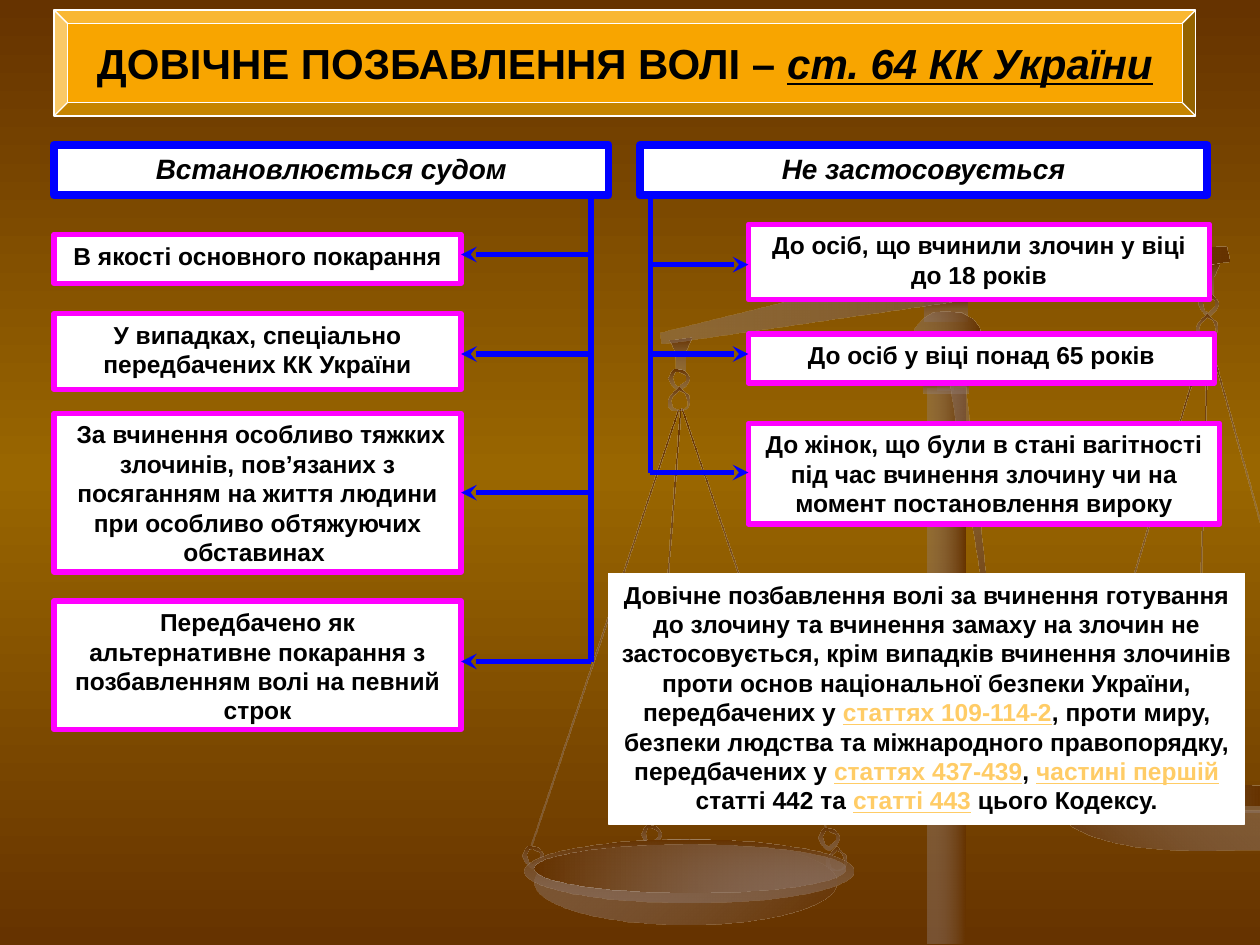
"""Build the slide on life imprisonment, with scales behind the scheme."""
from lxml import etree
from pptx import Presentation
from pptx import util as u
from pptx.dml.color import RGBColor
from pptx.enum import shapes, text
from pptx.oxml import ns

BLACK, WHITE, BLUE, PINK, GOLD = "000000", "FFFFFF", "0000FF", "FF00FF", "FFCC66"
BROWN, OCHRE, GREY = ("663300", 100), ("996600", 100), ("937F79", 40)
RISE, FADE = (BROWN, GREY), (GREY, BROWN)
KINDS = {"rect": shapes.MSO_SHAPE.RECTANGLE, "oval": shapes.MSO_SHAPE.OVAL,
         "round": shapes.MSO_SHAPE.ROUNDED_RECTANGLE, "bevel": shapes.MSO_SHAPE.BEVEL}

HOOK = [[(.18, 0), (0, .02), (.05, .12), (.05, .26), (.13, .26), (.13, .11)]]
LINK = [[(.08, .17), (.13, .13), (.15, .09), (.16, .07), (.15, .05), (.12, .01), (.07, 0),
         (.04, 0), (.02, .02), (.01, .05), (0, .07), (.02, .12), (.05, .15)],
        [(.08, .02), (.12, .04), (.13, .05), (.13, .07), (.13, .09), (.09, .12), (.08, .14),
         (.05, .12), (.04, .09), (.03, .06), (.05, .02)]]
LOOP = [[(0, .16), (.02, .18), (.04, .19), (.09, .19), (.14, .17), (.16, .12), (.15, .07),
         (.12, .04), (.08, 0), (.04, .04), (.01, .08), (0, .11)],
        [(.02, .11), (.03, .08), (.05, .06), (.08, .03), (.12, .05), (.13, .08), (.14, .12),
         (.14, .15), (.12, .17), (.07, .18), (.03, .16)]]
RIM = [[(9.58, 6.24), (8.97, 6.24), (8.65, 6.23), (8.46, 6.24), (8.31, 6.26), (8.27, 6.28),
        (8.32, 6.33), (8.52, 6.38), (8.78, 6.41), (9.14, 6.44), (9.58, 6.45), (10, 6.45),
        (10, 6.26), (9.8, 6.26)]]
BOWL = [[(8.31, 6.33), (8.35, 6.42), (8.42, 6.49), (8.52, 6.57), (8.65, 6.63), (8.82, 6.68),
         (9.03, 6.72), (9.28, 6.74), (9.57, 6.75), (10, 6.74), (10, 6.43), (9.53, 6.43),
         (9.18, 6.42), (8.86, 6.4), (8.57, 6.37)]]
INSIDE = [[(9.56, 6.23), (8.86, 6.23), (8.62, 6.23), (8.43, 6.26), (8.34, 6.28), (8.43, 6.31),
           (8.63, 6.34), (8.93, 6.37), (9.33, 6.38), (9.78, 6.39), (10, 6.39), (10, 6.24)]]
BEAM = [[(9.73, 1.96), (9.76, 2.08), (5.25, 2.73), (5.24, 2.64), (7.37, 2.12), (7.59, 2.09)]]
BRACE = [[(7.91, 5.39), (7.5, 2.8), (7.48, 2.68), (7.6, 2.65), (7.63, 2.77)]]
CAP = [[(7.52, 2.47), (7.63, 2.48), (7.72, 2.53), (7.77, 2.6), (7.79, 2.71), (7.24, 2.71),
        (7.26, 2.6), (7.32, 2.53), (7.4, 2.48)]]

CORDS = [(9.04, 2.6, 3.6, 16.6), (9.53, 2.66, 3.47, 1.5), (9.79, 2.64, 1.53, 344.6),
         (5.98, 3.15, 3.53, 341), (4.79, 3.16, 3.68, 18.6), (5.27, 3.25, 3.31, 4.2)]
SCALES = [("rect", (7.34, 2.37, .34, .18), RISE, 90, 0)]
SCALES += [("rect", (x, y, .01, h), RISE, 90, turn) for x, y, h, turn in CORDS]
SCALES += [
    (RIM, (0, 0), RISE, 90, 0), (BOWL, (0, 0), RISE, 315, 0), (INSIDE, (0, 0), FADE, 0, 0),
    (HOOK, (5.31, 2.68), RISE, 90, 0), (LINK, (5.31, 2.93), RISE, 90, 0),
    (LOOP, (5.31, 3.07), RISE, 90, 0), (HOOK, (9.5, 2.09), RISE, 90, 0),
    (LINK, (9.51, 2.34), RISE, 90, 0), (LOOP, (9.5, 2.49), RISE, 90, 0),
    (BEAM, (0, 0), FADE, 0, 0), (LINK, (5.09, 6.55), RISE, 90, 0),
    (LOOP, (6.56, 6.72), RISE, 90, 0), (LINK, (4.15, 6.72), RISE, 90, 0),
    ("oval", (4.24, 6.66, 2.4, .68), FADE, 45, 0),
    ("oval", (4.16, 6.66, 2.61, .5), RISE, 90, 0),
    ("oval", (4.24, 6.7, 2.47, .38), RISE, 0, 0), (LINK, (6.5, 6.58), RISE, 90, 0),
    ("rect", (7.36, 3.08, .3, 4.41), FADE, 0, 0), ("rect", (7.44, 2.68, .13, .42), RISE, 90, 0),
    ("round", (7.33, 3.03, .36, .09), RISE, 90, 0), (BRACE, (0, 0), FADE, 45, 0),
    (CAP, (0, 0), FADE, 0, 0)]

TITLE = [("ДОВІЧНЕ ПОЗБАВЛЕННЯ ВОЛІ – ", {}),
         ("ст. 64 КК України", {"italic": True, "underline": True})]
HEADS = [("Встановлюється судом", (.43, 1.15, 4.4, .4)),
         ("Не застосовується", (5.08, 1.15, 4.5, .4))]
ITEMS = [
    ("В якості основного покарання", (.43, 1.86, 3.23, .39)),
    ("У випадках, спеціально передбачених КК України", (.43, 2.49, 3.23, .6)),
    (" За вчинення особливо тяжких злочинів, пов’язаних з посяганням на життя людини "
     "при особливо обтяжуючих обставинах ", (.43, 3.28, 3.23, 1.26)),
    ("Передбачено як альтернативне покарання з позбавленням волі на певний строк",
     (.43, 4.77, 3.23, 1.02)),
    ("До осіб, що вчинили злочин у віці до 18 років", (5.94, 1.78, 3.66, .6)),
    ("До осіб у віці понад 65 років", (5.94, 2.65, 3.7, .39)),
    ("До жінок, що були в стані вагітності під час вчинення злочину чи на момент "
     "постановлення вироку", (5.94, 3.36, 3.74, .8))]
TREES = [(4.69, 3.66, (2.02, 2.81, 3.91, 5.25)), (5.16, 5.94, (2.1, 2.81, 3.75))]
REF = {"color": GOLD, "underline": True}
NOTE = [("Довічне позбавлення волі за вчинення готування до злочину та вчинення замаху на злочин "
         "не застосовується, крім випадків вчинення злочинів проти основ національної безпеки "
         "України, передбачених у ", {}), ("статтях 109-114-2", REF),
        (", проти миру, безпеки людства та міжнародного правопорядку, передбачених у ", {}),
        ("статтях 437-439", REF), (", ", {}), ("частині першій", REF),
        (" статті 442 та ", {}), ("статті 443", REF), (" цього Кодексу.", {})]


def rgb(value):
    return RGBColor.from_string(value)


def gradient(fill, element, stops, angle):
    fill.gradient()
    grad = element.find(".//" + ns.qn("a:gradFill"))
    for child in list(grad):
        grad.remove(child)
    gs_list = etree.SubElement(grad, ns.qn("a:gsLst"))
    for i, (color, alpha) in enumerate(stops):
        gs = etree.SubElement(gs_list, ns.qn("a:gs"), pos=str(i * 100000 // (len(stops) - 1)))
        clr = etree.SubElement(gs, ns.qn("a:srgbClr"), val=color)
        if alpha < 100:
            etree.SubElement(clr, ns.qn("a:alpha"), val=str(alpha * 1000))
    etree.SubElement(grad, ns.qn("a:lin"), ang=str(angle * 60000), scaled="0")


def outline(parent, contours, x, y):
    builder = None
    for contour in contours:
        pts = [(u.Inches(x + dx), u.Inches(y + dy)) for dx, dy in contour]
        if builder is None:
            builder = parent.build_freeform(*pts[0])
        else:
            builder.move_to(*pts[0])
        builder.add_line_segments(pts[1:], close=contours is not BRACE)
    return builder.convert_to_shape()


def draw_scales(s):
    group = s.shapes.add_group_shape().shapes
    for kind, place, stops, angle, turn in SCALES:
        if isinstance(kind, str):
            sp = group.add_shape(KINDS[kind], *map(u.Inches, place))
        else:
            sp = outline(group, kind, *place)
        sp.rotation = turn
        sp.shadow.inherit = False
        sp.line.fill.background()
        gradient(sp.fill, sp.element, stops, angle)


def box(s, place, runs, size, border, width, kind="rect", fill=WHITE, **frame):
    sp = s.shapes.add_shape(KINDS[kind], *map(u.Inches, place))
    sp.shadow.inherit = False
    sp.fill.solid()
    sp.fill.fore_color.rgb = rgb(fill)
    sp.line.color.rgb = rgb(border)
    sp.line.width = u.Pt(width)
    tf = sp.text_frame
    layout = {"word_wrap": True, "vertical_anchor": text.MSO_ANCHOR.TOP, **frame}
    for name, value in layout.items():
        setattr(tf, name, value)
    p = tf.paragraphs[0]
    p.alignment = text.PP_ALIGN.CENTER
    for words, style in runs:
        r = p.add_run()
        r.text = words
        look = {"name": "Arial", "size": u.Pt(size), "bold": True, **style}
        r.font.color.rgb = rgb(look.pop("color", BLACK))
        for name, value in look.items():
            setattr(r.font, name, value)


def line(s, x1, y1, x2, y2, arrow=False):
    c = s.shapes.add_connector(shapes.MSO_CONNECTOR.STRAIGHT, *map(u.Inches, (x1, y1, x2, y2)))
    c.line.color.rgb = rgb(BLUE)
    c.line.width = u.Pt(3)
    if arrow:
        etree.SubElement(c.line._get_or_add_ln(), ns.qn("a:tailEnd"), type="stealth")
    etree.SubElement(c.element.spPr, ns.qn("a:effectLst"))


def main():
    prs = Presentation()
    prs.slide_width, prs.slide_height = u.Inches(10), u.Inches(7.5)
    s = prs.slides.add_slide(prs.slide_layouts[6])
    gradient(s.background.fill, s.element, (BROWN, OCHRE, BROWN), 90)
    draw_scales(s)
    box(s, (.43, .08, 9.06, .84), TITLE, 24, WHITE, .75, "bevel", "F8A500",
        word_wrap=False, vertical_anchor=text.MSO_ANCHOR.MIDDLE)
    for words, place in HEADS:
        box(s, place, [(words, {"italic": True})], 16, BLUE, 4.5)
    for words, place in ITEMS:
        box(s, place, [(words, {})], 14, PINK, 3)
    for trunk, tip, levels in TREES:
        line(s, trunk, 1.55, trunk, levels[-1])
        for y in levels:
            line(s, trunk, y, tip, y, arrow=True)
    box(s, (4.83, 4.55, 5.05, 1.99), NOTE, 14, WHITE, .75,
        auto_size=text.MSO_AUTO_SIZE.SHAPE_TO_FIT_TEXT)
    prs.save("out.pptx")


if __name__ == "__main__":
    main()
